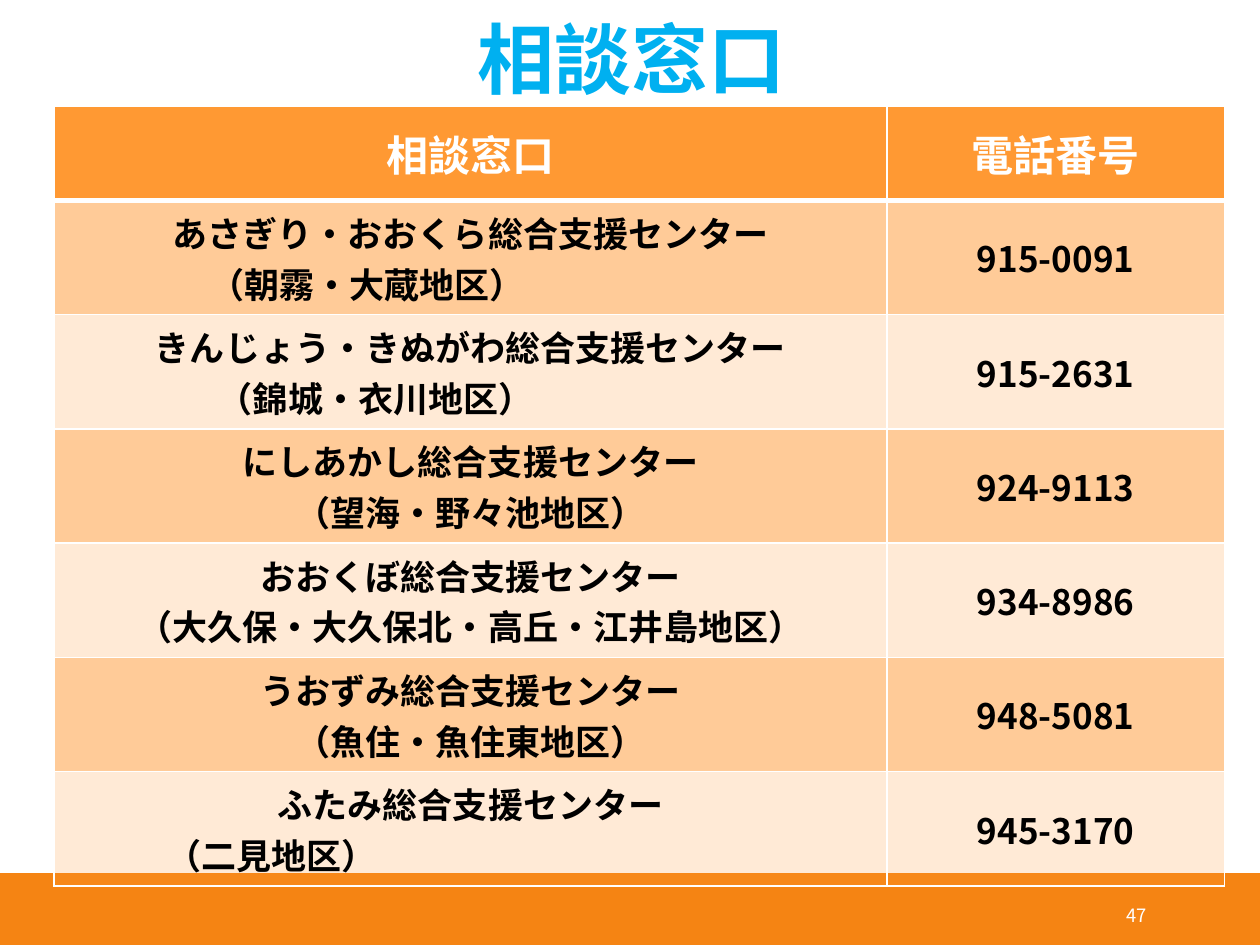
from dataclasses import dataclass
from lxml.etree import SubElement
from pptx import Presentation
from pptx.dml.color import RGBColor
from pptx.enum.shapes import MSO_SHAPE
from pptx.enum.text import MSO_ANCHOR, PP_ALIGN
from pptx.oxml.ns import qn
from pptx.util import Inches, Pt

WHITE = RGBColor(0xFF, 0xFF, 0xFF)
BLACK = RGBColor(0, 0, 0)
SKY = RGBColor(0x00, 0xB0, 0xF0)
ORANGE = RGBColor(0xFF, 0x99, 0x33)
BAR = RGBColor(0xF5, 0x84, 0x13)

CENTERS = [
    ("あさぎり・おおくら総合支援センター", "（朝霧・大蔵地区）", 1.13, "915-0091"),
    ("きんじょう・きぬがわ総合支援センター", "（錦城・衣川地区）", 1.2, "915-2631"),
    ("にしあかし総合支援センター", "（望海・野々池地区）", None, "924-9113"),
    ("おおくぼ総合支援センター", "（大久保・大久保北・高丘・江井島地区）", None, "934-8986"),
    ("うおずみ総合支援センター", "（魚住・魚住東地区）", None, "948-5081"),
    ("ふたみ総合支援センター", "（二見地区）", 0.79, "945-3170"),
]


@dataclass
class Deck:
    """Style and current slide; positions are in a grid of 100 columns by 75 rows."""
    prs: object
    s: object
    font: str = "Noto Sans CJK JP"

    def grid(self, x, y, w, h):
        """Turn grid columns and rows into slide lengths."""
        col, row = self.prs.slide_width / 100, self.prs.slide_height / 75
        return [int(v) for v in (x * col, y * row, w * col, h * row)]

    def bar(self, *box):
        """Add a plain band."""
        sp = self.s.shapes.add_shape(MSO_SHAPE.RECTANGLE, *self.grid(*box))
        sp.shadow.inherit = False
        sp.fill.solid()
        sp.fill.fore_color.rgb = BAR
        sp.line.fill.background()

    def run(self, p, text, size, color, bold=True, align=PP_ALIGN.CENTER):
        """Add one styled run to a paragraph."""
        p.alignment = align
        r = p.add_run()
        r.text = text
        r.font.name, r.font.size, r.font.bold = self.font, Pt(size), bold
        r.font.color.rgb = color
        SubElement(r.font._element, qn("a:ea"), typeface=self.font)

    def text(self, box, text, size, color, anchor=MSO_ANCHOR.TOP, **style):
        """Add a text box with one line."""
        tf = self.s.shapes.add_textbox(*self.grid(*box)).text_frame
        tf.word_wrap, tf.vertical_anchor = True, anchor
        self.run(tf.paragraphs[0], text, size, color, **style)

    def cell(self, cell, lines, size, color, opacity, top=1, bottom=1):
        """Fill a cell with (text, indent) lines; an indent in inches sets the line left."""
        cell.vertical_anchor = MSO_ANCHOR.MIDDLE
        tcPr = cell._tc.get_or_add_tcPr()
        for side, width in zip("LRTB", (1, 1, top, bottom)):
            ln = SubElement(tcPr, qn(f"a:ln{side}"), w=str(Pt(width)))
            fill = SubElement(ln, qn("a:solidFill"))
            SubElement(fill, qn("a:srgbClr"), val=str(WHITE))
        cell.fill.solid()
        cell.fill.fore_color.rgb = ORANGE
        if opacity < 100:
            clr = tcPr.find(qn("a:solidFill")).find(qn("a:srgbClr"))
            SubElement(clr, qn("a:alpha"), val=str(opacity * 1000))
        tf = cell.text_frame
        for i, (text, indent) in enumerate(lines):
            p = tf.add_paragraph() if i else tf.paragraphs[0]
            self.run(p, text, size, color,
                     align=PP_ALIGN.LEFT if indent else PP_ALIGN.CENTER)
            if indent:
                p._p.get_or_add_pPr().set("marL", str(Inches(indent)))

    def table(self, box, widths, heights, header, centers):
        """Add the table of centers and phone numbers."""
        tbl = self.s.shapes.add_table(len(heights), len(widths), *self.grid(*box)).table
        for col, w in zip(tbl.columns, widths):
            col.width = Inches(w)
        for row, h in zip(tbl.rows, heights):
            row.height = Inches(h)
        for c, label in enumerate(header):
            self.cell(tbl.cell(0, c), [(label, None)], 24, WHITE, 100, bottom=3)
        for i, (name, area, indent, phone) in enumerate(centers, 1):
            for c, lines in enumerate(([(name, None), (area, indent)], [(phone, None)])):
                self.cell(tbl.cell(i, c), lines, 20, BLACK,
                          50 if i % 2 else 20, top=3 if i == 1 else 1)


def main():
    prs = Presentation()
    prs.slide_width, prs.slide_height = Inches(10), Inches(7.5)
    deck = Deck(prs, prs.slides.add_slide(prs.slide_layouts[6]))
    deck.bar(0, 70, 100, 5)
    deck.bar(0, 69.3, 100, 0.7)
    deck.table((4.3, 8.4, 92.9, 60.6), (6.61, 2.68), [0.75] + [0.89] * len(CENTERS),
               ("相談窓口", "電話番号"), CENTERS)
    deck.text((5.1, 0.4, 90, 12.5), "相談窓口", 44, SKY)
    deck.text((81.2, 70.6, 10.8, 4), "47", 10.5, WHITE, MSO_ANCHOR.MIDDLE,
              bold=False, align=PP_ALIGN.RIGHT)
    prs.save("out.pptx")


if __name__ == "__main__":
    main()
